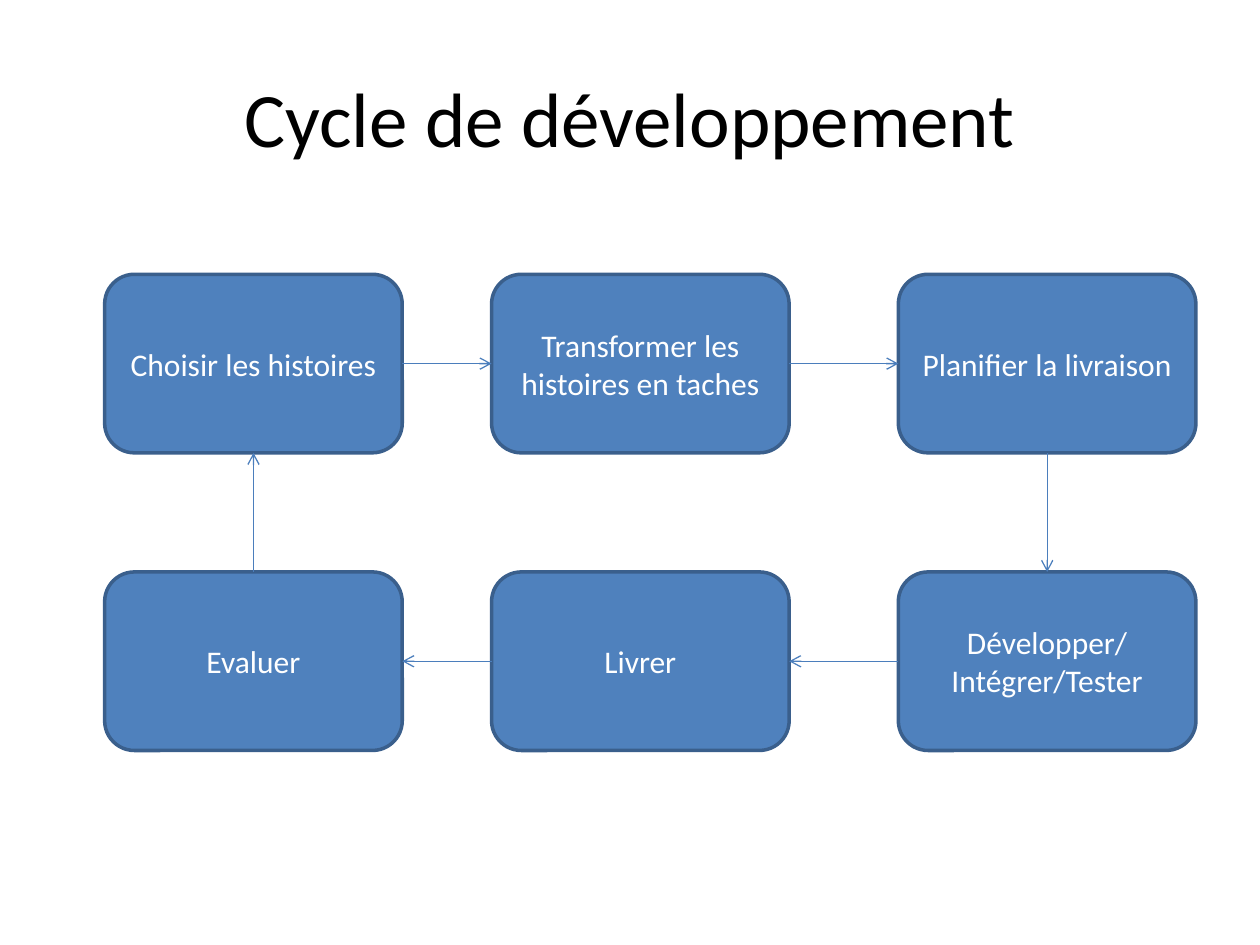
from dataclasses import dataclass

from lxml.etree import SubElement
from pptx import Presentation
from pptx.dml.color import RGBColor
from pptx.enum.shapes import MSO_CONNECTOR, MSO_SHAPE
from pptx.enum.text import MSO_ANCHOR, PP_ALIGN
from pptx.oxml.ns import qn
from pptx.shapes.autoshape import Shape
from pptx.slide import Slide
from pptx.text.text import TextFrame
from pptx.util import Cm, Pt

BLACK = RGBColor(0x00, 0x00, 0x00)
WHITE = RGBColor(0xFF, 0xFF, 0xFF)
BLUE = RGBColor(0x4F, 0x81, 0xBD)
BORDER_BLUE = RGBColor(0x3A, 0x5F, 0x8C)
ARROW_BLUE = RGBColor(0x4B, 0x7E, 0xBC)

COLUMN_LEFTS = (2.11, 9.91, 18.11)
ROW_TOPS = (5.53, 11.53)
BOX_WIDTH = 6
BOX_HEIGHT = 3.6
TOP, LEFT, BOTTOM, RIGHT = range(4)


@dataclass(frozen=True)
class Step:
    text: str
    column: int
    row: int
    exit_side: int
    next_entry_side: int


STEPS = (
    Step("Choisir les histoires", 0, 0, RIGHT, LEFT),
    Step("Transformer les histoires en taches", 1, 0, RIGHT, LEFT),
    Step("Planifier la livraison", 2, 0, BOTTOM, TOP),
    Step("Développer/\nIntégrer/Tester", 2, 1, LEFT, RIGHT),
    Step("Livrer", 1, 1, LEFT, RIGHT),
    Step("Evaluer", 0, 1, TOP, BOTTOM),
)


def write_text(frame: TextFrame, text: str, *, size: float, color: RGBColor) -> None:
    frame.text = text
    frame.word_wrap = True
    frame.vertical_anchor = MSO_ANCHOR.MIDDLE
    for para in frame.paragraphs:
        para.alignment = PP_ALIGN.CENTER
        for span in para.runs:
            span.font.name = "Calibri"
            span.font.size = Pt(size)
            span.font.color.rgb = color


def add_title(page: Slide, text: str) -> None:
    title = page.shapes.title
    title.left, title.top = Cm(1.27), Cm(0.76)
    title.width, title.height = Cm(22.86), Cm(3.18)
    write_text(title.text_frame, text, size=44, color=BLACK)


def add_step(page: Slide, step: Step) -> Shape:
    box = page.shapes.add_shape(
        MSO_SHAPE.ROUNDED_RECTANGLE,
        Cm(COLUMN_LEFTS[step.column]),
        Cm(ROW_TOPS[step.row]),
        Cm(BOX_WIDTH),
        Cm(BOX_HEIGHT),
    )
    box.shadow.inherit = False
    box.fill.solid()
    box.fill.fore_color.rgb = BLUE
    box.line.color.rgb = BORDER_BLUE
    box.line.width = Pt(2)
    write_text(box.text_frame, step.text, size=18, color=WHITE)
    return box


def add_arrow(page: Slide, start: Shape, start_side: int, end: Shape, end_side: int) -> None:
    arrow = page.shapes.add_connector(MSO_CONNECTOR.STRAIGHT, 0, 0, 0, 0)
    arrow.begin_connect(start, start_side)
    arrow.end_connect(end, end_side)
    arrow.line.color.rgb = ARROW_BLUE
    arrow.line.width = Pt(0.75)
    properties = arrow.element.spPr
    SubElement(properties.find(qn("a:ln")), qn("a:tailEnd"), type="arrow")
    SubElement(properties, qn("a:effectLst"))


def main() -> None:
    deck = Presentation()
    deck.slide_width, deck.slide_height = Cm(25.4), Cm(19.05)
    page = deck.slides.add_slide(deck.slide_layouts[5])
    add_title(page, "Cycle de développement")
    boxes = [add_step(page, step) for step in STEPS]
    for step, box, next_box in zip(STEPS, boxes, boxes[1:] + boxes[:1]):
        add_arrow(page, box, step.exit_side, next_box, step.next_entry_side)
    deck.save("out.pptx")


if __name__ == "__main__":
    main()
